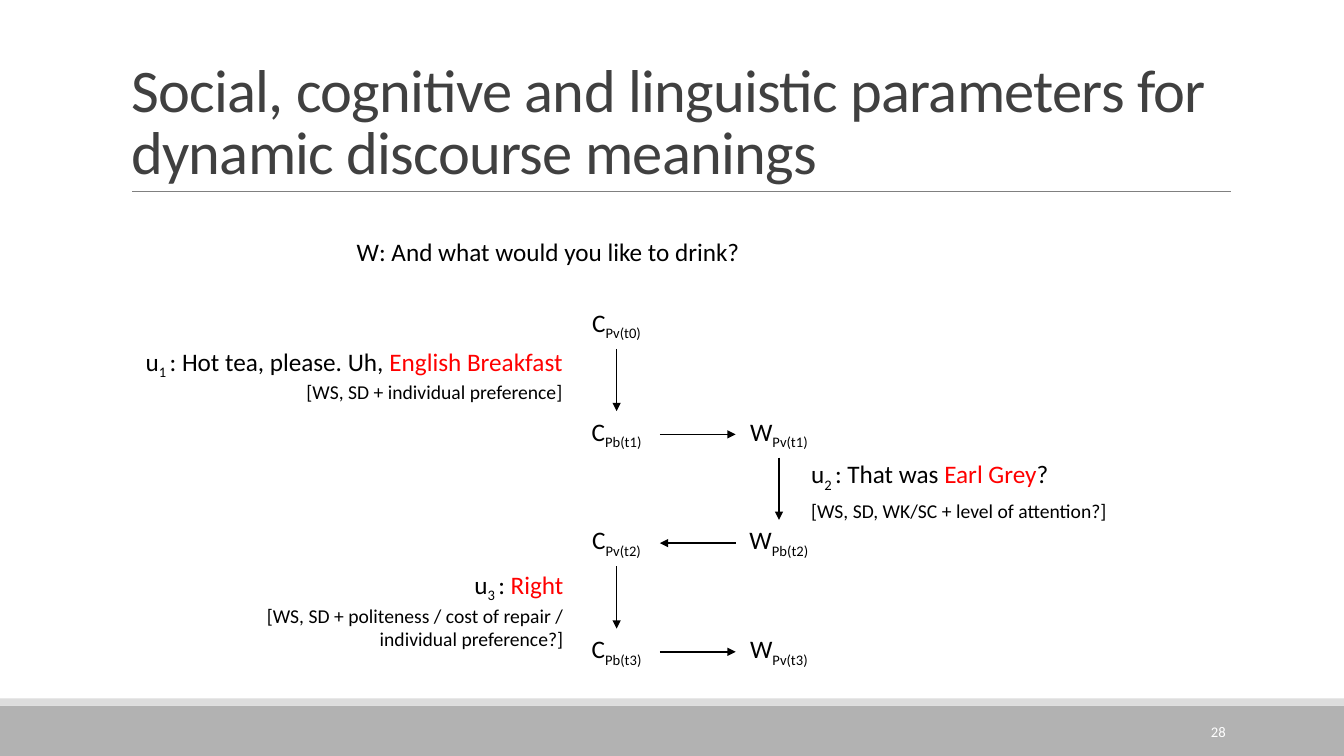
"""Build the slide on parameters for dynamic discourse meanings."""
from itertools import pairwise

from lxml.etree import SubElement
from pptx import Presentation
from pptx.dml.color import RGBColor
from pptx.enum.shapes import MSO_CONNECTOR, MSO_SHAPE
from pptx.enum.text import MSO_ANCHOR, MSO_AUTO_SIZE, PP_ALIGN
from pptx.oxml.ns import qn
from pptx.util import Cm, Pt

FONT = "Calibri"
COLOURS = {
    "title": "404040",
    "text": "000000",
    "highlight": "FF0000",
    "rule": "808080",
    "footer": "B2B2B2",
    "strip": "DDDDDD",
    "number": "FFFFFF",
}


def fill_paragraph(paragraph, runs, size, align=PP_ALIGN.LEFT, colour="text"):
    """Write (text, style) runs, where style is plain, sub or highlight."""
    paragraph.alignment = align
    paragraph.font.name = FONT
    paragraph.font.size = Pt(size)
    paragraph.font.color.rgb = RGBColor.from_string(COLOURS[colour])
    for text, style in runs:
        run = paragraph.add_run()
        run.text = text
        if style == "sub":
            run._r.get_or_add_rPr().set("baseline", "-25000")
        elif style == "highlight":
            run.font.color.rgb = RGBColor.from_string(COLOURS["highlight"])


def add_line(shapes, start, end, colour, width):
    """Draw a straight line between two points in centimetres."""
    line = shapes.add_connector(MSO_CONNECTOR.STRAIGHT, *map(Cm, start + end))
    line.line.color.rgb = RGBColor.from_string(COLOURS[colour])
    line.line.width = Pt(width)
    SubElement(line._element.spPr, qn("a:effectLst"))
    return line


presentation = Presentation()
presentation.slide_width = Cm(33.87)
presentation.slide_height = Cm(19.05)
slide = presentation.slides.add_slide(presentation.slide_layouts[5])
shapes = slide.shapes

for top, height, colour in [(17.78, 1.27, "footer"), (17.6, 0.18, "strip")]:
    bar = shapes.add_shape(
        MSO_SHAPE.RECTANGLE, 0, Cm(top), presentation.slide_width, Cm(height)
    )
    bar.shadow.inherit = False
    bar.fill.solid()
    bar.fill.fore_color.rgb = RGBColor.from_string(COLOURS[colour])
    bar.line.fill.background()

add_line(shapes, (3.33, 4.82), (31.02, 4.82), "rule", 0.5)

title = shapes.title
title.left, title.top, title.width, title.height = map(Cm, (3.05, 0.79, 27.94, 4.04))
title.text_frame.auto_size = MSO_AUTO_SIZE.NONE
title.text_frame.vertical_anchor = MSO_ANCHOR.BOTTOM
title_paragraph = title.text_frame.paragraphs[0]
title_text = "Social, cognitive and linguistic parameters for dynamic discourse meanings"
fill_paragraph(title_paragraph, [(title_text, "plain")], 43.2, colour="title")
title_paragraph.line_spacing = 0.85
title_paragraph.runs[0]._r.get_or_add_rPr().set("spc", "-50")

number = shapes.add_textbox(Cm(27.51), Cm(17.93), Cm(3.63), Cm(1.02))
number.text_frame.vertical_anchor = MSO_ANCHOR.MIDDLE
fill_paragraph(
    number.text_frame.paragraphs[0], [("28", "plain")], 10.5, PP_ALIGN.RIGHT, "number"
)

question = shapes.add_textbox(Cm(8.74), Cm(5.82), Cm(10.69), Cm(1.8))
question.text_frame.word_wrap = True
fill_paragraph(
    question.text_frame.paragraphs[0],
    [("W: And what would you like to drink?", "plain")],
    18,
)

COLUMN_LEFT = {"C": 14.45, "W": 18.54}
FIRST_ROW, ROW_STEP = 7.62, 2.74
STATE_WIDTH, STATE_HEIGHT = 2.18, 1.17
states = [
    ("C", "Pv", 0),
    ("C", "Pb", 1),
    ("W", "Pv", 1),
    ("W", "Pb", 2),
    ("C", "Pv", 2),
    ("C", "Pb", 3),
    ("W", "Pv", 3),
]

for speaker, status, time in states:
    state = shapes.add_textbox(
        Cm(COLUMN_LEFT[speaker]),
        Cm(FIRST_ROW + time * ROW_STEP),
        Cm(STATE_WIDTH),
        Cm(STATE_HEIGHT),
    )
    state.text_frame.word_wrap = True
    fill_paragraph(
        state.text_frame.paragraphs[0],
        [(speaker, "plain"), (f"{status}(t{time})", "sub")],
        18,
        PP_ALIGN.CENTER,
    )

for (speaker, _, time), (next_speaker, _, next_time) in pairwise(states):
    left, next_left = COLUMN_LEFT[speaker], COLUMN_LEFT[next_speaker]
    top = FIRST_ROW + time * ROW_STEP
    if speaker == next_speaker:
        middle = left + STATE_WIDTH / 2
        start = (middle, top + STATE_HEIGHT)
        end = (middle, FIRST_ROW + next_time * ROW_STEP)
    else:
        middle = top + STATE_HEIGHT / 2
        inner_edges = [COLUMN_LEFT["C"] + STATE_WIDTH, COLUMN_LEFT["W"]]
        if next_left < left:
            inner_edges.reverse()
        start, end = [(edge, middle) for edge in inner_edges]
    arrow = add_line(shapes, start, end, "text", 1)
    SubElement(arrow.line._get_or_add_ln(), qn("a:tailEnd"), type="triangle")

utterances = [
    ("1", (-0.33, 8.59, 14.76, 1.63), PP_ALIGN.RIGHT, 0,
     [(": Hot tea, please. Uh, ", "plain"), ("English Breakfast", "highlight")],
     "[WS, SD + individual preference]"),
    ("2", (20.19, 11.43, 14, 1.8), PP_ALIGN.LEFT, 4,
     [(": That was ", "plain"), ("Earl Grey", "highlight"), ("?", "plain")],
     "[WS, SD, WK/SC + level of attention?]"),
    ("3", (5.46, 14.22, 8.99, 2.24), PP_ALIGN.RIGHT, 0,
     [(": ", "plain"), ("Right", "highlight")],
     "[WS, SD + politeness / cost of repair / individual preference?]"),
]

for index, box, align, gap, speech, parameters in utterances:
    utterance = shapes.add_textbox(*map(Cm, box))
    frame = utterance.text_frame
    frame.word_wrap = True
    label = [("u", "plain"), (f"{index} ", "sub")]
    fill_paragraph(frame.paragraphs[0], label + speech, 18, align)
    note = frame.add_paragraph()
    fill_paragraph(note, [(parameters, "plain")], 14, align)
    note.space_before = Pt(gap)

presentation.save("out.pptx")
